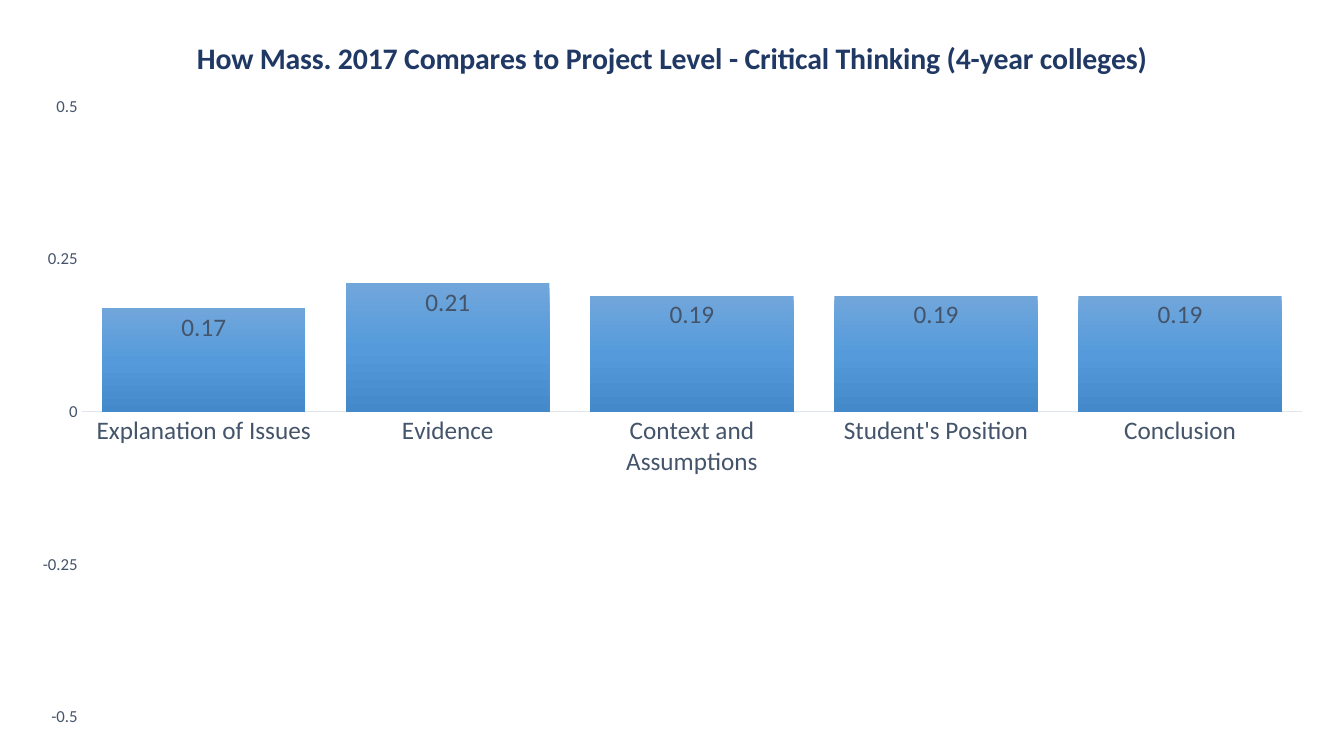
"""Build a slide with a column chart of critical thinking scores."""
from copy import deepcopy
from typing import NamedTuple

from pptx import Presentation
from pptx.chart.chart import Chart
from pptx.chart.data import CategoryChartData
from pptx.chart.series import BarSeries
from pptx.dml.color import RGBColor
from pptx.enum.chart import XL_CHART_TYPE, XL_LABEL_POSITION, XL_TICK_MARK
from pptx.oxml import parse_xml
from pptx.oxml.ns import nsdecls, qn
from pptx.text.text import Font
from pptx.util import Pt


class Bar(NamedTuple):
    label: str
    score: float


class Stop(NamedTuple):
    place: float
    shade: str


FACE = "Calibri"
SLATE = "44546A"
TITLE = "How Mass. 2017 Compares to Project Level - Critical Thinking (4-year colleges)"
BARS = [
    Bar("Explanation of Issues", 0.17),
    Bar("Evidence", 0.21),
    Bar("Context and Assumptions", 0.19),
    Bar("Student's Position", 0.19),
    Bar("Conclusion", 0.19),
]
STOPS = [Stop(0, "71A6DB"), Stop(0.5, "559BDB"), Stop(1, "448ACA")]
FRAME = {"x": 0.05, "y": 0.13, "w": 0.93, "h": 0.84}


def color(shade: str) -> RGBColor:
    return RGBColor.from_string(shade)


def style(font: Font, size: float, shade: str = SLATE, bold: bool = False) -> None:
    font.name = FACE
    font.size = Pt(size)
    font.bold = bold
    font.color.rgb = color(shade)


def set_title(chart: Chart) -> None:
    chart.has_title = True
    chart.chart_title.include_in_layout = False
    frame = chart.chart_title.text_frame
    frame.text = TITLE
    style(frame.paragraphs[0].font, 21.3, "203864", True)


def set_axes(chart: Chart) -> None:
    base, scale = chart.category_axis, chart.value_axis
    for axis, size in ((base, 18), (scale, 12)):
        axis.major_tick_mark = axis.minor_tick_mark = XL_TICK_MARK.NONE
        axis.has_major_gridlines = False
        style(axis.tick_labels.font, size)
    base.format.line.color.rgb = color("E0E5EB")
    base.format.line.width = Pt(0.75)
    scale.format.line.fill.background()
    scale.minimum_scale, scale.maximum_scale = -0.5, 0.5
    scale.major_unit = 0.25
    scale.tick_labels.number_format = "General"
    scale.tick_labels.number_format_is_linked = False


def paint(series: BarSeries) -> None:
    fill = series.format.fill
    fill.gradient()
    fill.gradient_angle = 270
    nodes = series.format.fill.gradient_stops
    group = next(series._element.iter(qn("a:gsLst")))
    for _ in range(len(STOPS) - len(nodes)):
        group.append(deepcopy(group[0]))
    for node, stop in zip(fill.gradient_stops, STOPS):
        node.position = stop.place
        node.color.rgb = color(stop.shade)


def set_labels(series: BarSeries) -> None:
    labels = series.data_labels
    labels.show_value = True
    labels.position = XL_LABEL_POSITION.INSIDE_END
    style(labels.font, 18)


def set_frame(chart: Chart) -> None:
    area = next(chart._chartSpace.iter(qn("c:plotArea")))
    for old in area.findall(qn("c:layout")):
        area.remove(old)
    modes = "".join(f'<c:{key}Mode val="edge"/>' for key in "xy")
    sides = "".join(f'<c:{key} val="{val}"/>' for key, val in FRAME.items())
    area.insert(0, parse_xml(
        f'<c:layout {nsdecls("c")}><c:manualLayout><c:layoutTarget val="inner"/>'
        f"{modes}{sides}</c:manualLayout></c:layout>"
    ))


def main() -> None:
    deck = Presentation()
    deck.slide_width, deck.slide_height = Pt(960), Pt(540)
    slide = deck.slides.add_slide(deck.slide_layouts[6])

    data = CategoryChartData()
    data.categories = [bar.label for bar in BARS]
    data.add_series("Series 1", [bar.score for bar in BARS])
    chart = slide.shapes.add_chart(
        XL_CHART_TYPE.COLUMN_CLUSTERED, Pt(11.5), Pt(8.6), Pt(937.4), Pt(519.1), data
    ).chart
    style(chart.font, 10, "000000")
    chart.has_legend = False
    set_title(chart)
    set_axes(chart)
    set_frame(chart)

    plot = chart.plots[0]
    plot.gap_width, plot.overlap = 20, -24
    plot.vary_by_categories = False
    series = plot.series[0]
    series.invert_if_negative = False
    paint(series)
    set_labels(series)
    deck.save("out.pptx")


if __name__ == "__main__":
    main()
